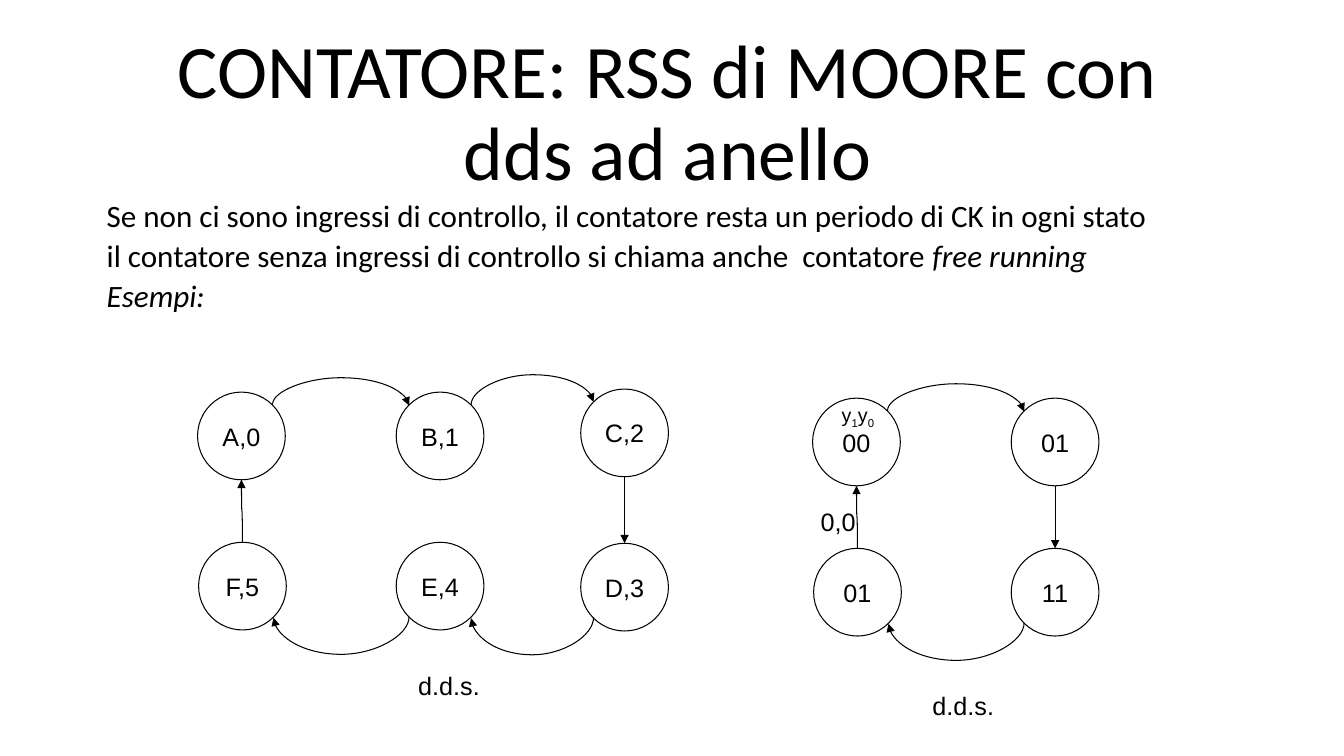
import math

from lxml import etree
from pptx import Presentation
from pptx.dml.color import RGBColor
from pptx.enum import shapes, text
from pptx.oxml import ns
from pptx.util import Inches, Pt

TITLE = "CONTATORE: RSS di MOORE con dds ad anello"
BODY = [  # each line is a list of (text, italic)
    [("Se non ci sono ingressi di controllo, il contatore resta un periodo di CK in ogni stato", False)],
    [("il contatore senza ingressi di controllo si chiama anche  contatore ", False),
     ("free running", True)],
    [("Esempi:", True)],
]
# Each ring lists its states clockwise: label, left, top
RINGS = [
    [("A,0", 1.96, 3.89), ("B,1", 3.93, 3.89), ("C,2", 5.76, 3.86),
     ("D,3", 5.76, 5.39), ("E,4", 3.93, 5.38), ("F,5", 1.97, 5.38)],
    [("00", 8.06, 3.95), ("01", 10.03, 3.95), ("11", 10.03, 5.44), ("01", 8.07, 5.44)],
]
# Runs, size, box, wrap; a run is (text, subscript)
LABELS = [
    ([("d.d.s.", False)], 18, (4.05, 6.6, 0.86, 0.4), True),
    ([("d.d.s.", False)], 18, (9.15, 6.8, 0.86, 0.4), True),
    ([("y", False), ("1", True), ("y", False), ("0", True)], 14, (8.25, 3.95, 0.55, 0.34), False),
    ([("0,0", False)], 18, (8.04, 4.97, 0.55, 0.4), False),
]
DIAMETER = 0.87
RISE_ABOVE, DROP_BELOW = 0.27, 0.38
BLACK, WHITE = "000000", "FFFFFF"
# Ellipse connection sites, counted anticlockwise from the top
TOP, TOP_LEFT, BOTTOM_LEFT, BOTTOM, BOTTOM_RIGHT, TOP_RIGHT = 0, 1, 3, 4, 5, 7


def color(hex_string):
    return RGBColor.from_string(hex_string)


def format_run(run, size, font):
    run.font.size = Pt(size)
    run.font.name = font
    run.font.color.rgb = color(BLACK)


def add_text_box(slide, box, wrap):
    shape = slide.shapes.add_textbox(*map(Inches, box))
    shape.text_frame.word_wrap = wrap
    return shape.text_frame


def add_state(slide, label, left, top):
    shape = slide.shapes.add_shape(shapes.MSO_SHAPE.OVAL, Inches(left), Inches(top),
                                   Inches(DIAMETER), Inches(DIAMETER))
    shape.shadow.inherit = False
    shape.fill.solid()
    shape.fill.fore_color.rgb = color(WHITE)
    shape.line.color.rgb = color(BLACK)
    shape.line.width = Pt(0.75)
    frame = shape.text_frame
    frame.text = label
    frame.word_wrap = False
    frame.vertical_anchor = text.MSO_ANCHOR.MIDDLE
    frame.paragraphs[0].alignment = text.PP_ALIGN.CENTER
    format_run(frame.paragraphs[0].runs[0], 18, "Arial")
    return shape


def site_point(state, site):
    angle = math.radians(90 + 45 * site)
    radius = DIAMETER / 2
    _, left, top = state
    return left + radius * (1 + math.cos(angle)), top + radius * (1 - math.sin(angle))


def route(start, end):
    """Return the two connection sites and the bend direction (-1 up, 0 none, 1 down)."""
    dx, dy = end[1] - start[1], end[2] - start[2]
    if abs(dy) > abs(dx):
        return (BOTTOM, TOP, 0) if dy > 0 else (TOP, BOTTOM, 0)
    return (TOP_RIGHT, TOP_LEFT, -1) if dx > 0 else (BOTTOM_LEFT, BOTTOM_RIGHT, 1)


def add_arrow(slide, start, end, start_shape, end_shape):
    start_site, end_site, bend = route(start, end)
    x1, y1 = site_point(start, start_site)
    x2, y2 = site_point(end, end_site)
    turn = {-1: min(y1, y2) - RISE_ABOVE, 0: (y1 + y2) / 2, 1: max(y1, y2) + DROP_BELOW}[bend]
    dx, dy = x2 - x1, y2 - y1
    if abs(dy) < 0.01:
        dy = 0.01

    # Attach both ends, then choose among the eight sites of the ellipse
    arrow = slide.shapes.add_connector(shapes.MSO_CONNECTOR.CURVE, 0, 0, 0, 0)
    arrow.begin_connect(start_shape, TOP)
    arrow.end_connect(end_shape, TOP)
    ends = arrow._element.nvCxnSpPr.cNvCxnSpPr
    ends.stCxn.idx, ends.endCxn.idx = start_site, end_site
    arrow.line.color.rgb = color(BLACK)
    arrow.line.width = Pt(0.75)

    # The curve leaves vertically, so its frame is turned by 90 degrees
    width, height = abs(dy), abs(dx)
    arrow.left = Inches((x1 + x2 - width) / 2)
    arrow.top = Inches((y1 + y2 - height) / 2)
    arrow.width, arrow.height = Inches(width), Inches(height)
    properties = arrow._element.spPr
    frame = properties.find(ns.qn("a:xfrm"))
    frame.set("rot", str(90 * 60000))
    frame.set("flipH", str(int(dy < 0)))
    frame.set("flipV", str(int(dx > 0)))

    adjustments = properties.find(ns.qn("a:prstGeom")).get_or_add_avLst()
    guide = etree.SubElement(adjustments, ns.qn("a:gd"))
    guide.set("name", "adj1")
    guide.set("fmla", f"val {round((turn - y1) / dy * 100000)}")
    head = etree.SubElement(properties.find(ns.qn("a:ln")), ns.qn("a:tailEnd"))
    head.set("type", "triangle")
    etree.SubElement(properties, ns.qn("a:effectLst"))


def main():
    presentation = Presentation()
    presentation.slide_width, presentation.slide_height = Inches(13.33), Inches(7.5)
    slide = presentation.slides.add_slide(presentation.slide_layouts[5])

    # Title
    title = slide.shapes.title
    title.left, title.top, title.width, title.height = map(Inches, (1.62, 0.14, 10, 1.86))
    title.text_frame.text = TITLE
    title.text_frame.word_wrap = True
    title.text_frame.auto_size = text.MSO_AUTO_SIZE.NONE
    title.text_frame.vertical_anchor = text.MSO_ANCHOR.BOTTOM
    paragraph = title.text_frame.paragraphs[0]
    paragraph.alignment = text.PP_ALIGN.CENTER
    paragraph.line_spacing = 0.9
    format_run(paragraph.runs[0], 54, "Calibri")

    # Introduction
    frame = add_text_box(slide, (0.96, 2, 11.51, 1.24), True)
    for index, line in enumerate(BODY):
        paragraph = frame.add_paragraph() if index else frame.paragraphs[0]
        paragraph.line_spacing = 0.7
        paragraph.space_before = Pt(10)
        for words, italic in line:
            run = paragraph.add_run()
            run.text = words
            format_run(run, 22.2, "Calibri")
            run.font.italic = italic

    # State rings
    for ring in RINGS:
        circles = [add_state(slide, *state) for state in ring]
        for index, state in enumerate(ring):
            following = (index + 1) % len(ring)
            add_arrow(slide, state, ring[following], circles[index], circles[following])

    # Labels
    for runs, size, box, wrap in LABELS:
        paragraph = add_text_box(slide, box, wrap).paragraphs[0]
        for words, subscript in runs:
            run = paragraph.add_run()
            run.text = words
            format_run(run, size, "Arial")
            if subscript:
                run.font._element.set("baseline", "-25000")

    presentation.save("out.pptx")


if __name__ == "__main__":
    main()
